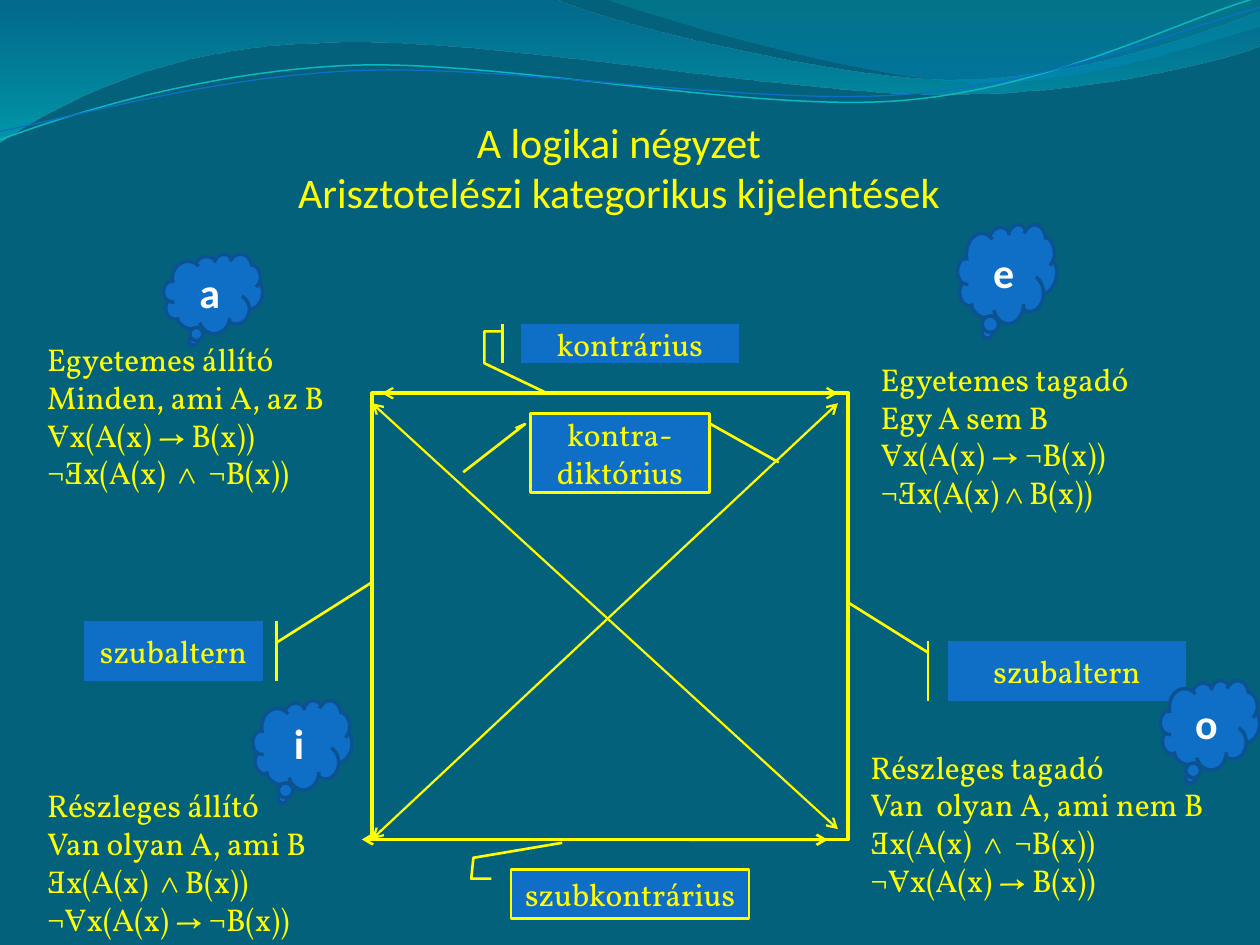
"""Build a slide showing the logical square of Aristotelian categorical statements."""
import pptx
import pptx.dml.color
import pptx.enum.shapes
import pptx.enum.text
import pptx.oxml
import pptx.oxml.ns
import pptx.util

Pt = pptx.util.Pt
KINDS = pptx.enum.shapes.MSO_SHAPE
MIDDLE = pptx.enum.text.MSO_ANCHOR.MIDDLE
CENTER = pptx.enum.text.PP_ALIGN.CENTER
YELLOW, BLUE, NAVY, WHITE, TEAL = "FFFF00", "0F6FC6", "0B5292", "FFFFFF", "04617B"

TITLE = "A logikai négyzet\vArisztotelészi kategorikus kijelentések"
TITLE_FONT = {"name": "Calibri", "size": Pt(24), "bold": False}
BODY_FONT = {"name": "Vollkorn", "size": Pt(18)}
CLOUD_FONT = {"name": "Calibri", "size": Pt(24), "bold": True}

BANDS = [
    ([(0, 0), (316.8, -0.7), (342.7, 12.2, 478.1, 45.4, 545.8, 45.4),
      (614.2, 45.4, 689.8, 18.7, 720, 6.5), (720.7, 25.9),
      (707.8, 31.7, 626.4, 54.7, 537.1, 54), (447.8, 54, 275, 20.2, 185, 24.5),
      (92.9, 25.9, 33.1, 59.8, -0.7, 81.4)],
     [(0, "0074A1", 45), (1, "00C6CF", 55)]),
    ([(344.9, -0.7), (366.5, 7.9, 491, 44.6, 553.7, 46.8),
      (616.3, 49.7, 691.9, 23, 720, 15.1), (720, 0)],
     [(0, "00A1A9", 30), (0.8, "008BBF", 45)]),
]
WAVES = [
    ([(0, 79.9), (34.6, 67, 113.8, 41, 199.4, 37.4),
      (284.4, 33.8, 427, 64.1, 513.4, 57.6),
      (599.8, 51.1, 675.4, 10.8, 718.6, -1.4)], "0AB8BF", 0.85),
    ([(0, 74.9), (33.8, 69.1, 118.1, 43.9, 203.8, 40.3),
      (290.2, 36.7, 429.8, 60.5, 516.2, 54),
      (601.9, 48.2, 677.5, 15.1, 720, 4.3)], BLUE, 0.75),
]
SQUARE = (212.6, 224.7, 272.1, 255)
STATEMENTS = [
    ((19.85, 190.7, 175.7, 94.3), ["Egyetemes állító", "Minden, ami A, az B",
                                   "∀x(A(x) → B(x))", "¬∃x(A(x)  ∧  ¬B(x))"]),
    ((19.85, 445.7, 181.4, 116.6), ["Részleges állító", "Van olyan A, ami B",
                                    "∃x(A(x)  ∧ B(x))", "¬∀x(A(x) → ¬B(x))"]),
    ((496.1, 202.1, 203.8, 94.3), ["Egyetemes tagadó", "Egy A sem B",
                                   "∀x(A(x) → ¬B(x))", "¬∃x(A(x) ∧ B(x))"]),
    ((490.3, 423.6, 209.5, 94.3), ["Részleges tagadó", "Van  olyan A, ami nem B",
                                   "∃x(A(x)  ∧  ¬B(x))", "¬∀x(A(x) → B(x))"]),
]
CALLOUTS = [
    ("kontra-diktórius", KINDS.LINE_CALLOUT_2, (303.1, 236.2, 102.2, 45.4),
     (0.188, -0.083, 0.136, -0.03, 0.741, -0.376)),
    ("kontrárius", KINDS.LINE_CALLOUT_3_ACCENT_BAR, (297.6, 185.2, 124.6, 22.4),
     (0.188, -0.083, 0.188, -0.167, 1, -0.167, 1.744, 0.112)),
    ("szubkontrárius", KINDS.LINE_CALLOUT_3, (292, 496.8, 136.1, 28.2),
     (0.188, -0.083, 0.188, -0.167, -0.236, -0.158, -0.539, 0.215)),
    ("szubaltern", KINDS.LINE_CALLOUT_1_ACCENT_BAR, (48.1, 355, 102.1, 34),
     (0.358, 1.077, -0.65, 1.608)),
    ("szubaltern", KINDS.LINE_CALLOUT_1_ACCENT_BAR, (541.6, 366.5, 136.1, 34),
     (0.188, -0.083, -0.65, -0.417)),
]
CLOUDS = [("a", (93.5, 145.2, 56.7, 45.4)), ("o", (663.1, 388.8, 56.7, 51.1)),
          ("i", (144.5, 400.2, 56.7, 51.1)), ("e", (547.2, 128.2, 56.7, 56.7))]
LINES = [
    ((212.6, 230.4, 478.8, 473.8), 1.25, True),
    ((212.6, 479.5, 478.8, 230.4), 1.25, True),
    ((405.3, 241.9, 445, 264.2), 1.5, False),
    ((218.2, 224.7, 478.8, 224.7), 1.25, True),
    ((206.8, 479.7, 473, 479.9), 1.5, True),
]


def rgb(value):
    return pptx.dml.color.RGBColor.from_string(value)


def points(values):
    return [Pt(value) for value in values]


def assign(target, values):
    for name, value in values.items():
        setattr(target, name, value)


def make_xml(tag, attributes="", content=""):
    namespace = pptx.oxml.ns.nsdecls("a")
    return pptx.oxml.parse_xml(f"<a:{tag} {namespace} {attributes}>{content}</a:{tag}>")


def paint(shape, fill=None, line=None, width=1):
    shape.shadow.inherit = False
    if fill:
        shape.fill.solid()
        shape.fill.fore_color.rgb = rgb(fill)
    else:
        shape.fill.background()
    if line:
        shape.line.color.rgb = rgb(line)
        shape.line.width = Pt(width)
    else:
        shape.line.fill.background()


def write(shape, lines, font, color=YELLOW, alignment=None, anchor=None):
    frame = shape.text_frame
    assign(frame, {"word_wrap": True, "vertical_anchor": anchor})
    for index, text in enumerate(lines):
        paragraph = frame.paragraphs[0] if index == 0 else frame.add_paragraph()
        paragraph.text = text
        paragraph.alignment = alignment
        for run in paragraph.runs:
            assign(run.font, font)
            run.font.color.rgb = rgb(color)


def add_outline(slide, outline, close):
    knots = [points(segment[-2:]) for segment in outline]
    builder = slide.shapes.build_freeform(*knots[0])
    builder.add_line_segments(knots[1:], close=close)
    shape = builder.convert_to_shape()
    straight = shape.element.spPr.findall(".//" + pptx.oxml.ns.qn("a:lnTo"))
    for element, segment in zip(straight, outline[1:]):
        if len(segment) == 6:
            values = points(segment)
            content = "".join(f'<a:pt x="{x - shape.left}" y="{y - shape.top}"/>'
                              for x, y in zip(values[::2], values[1::2]))
            element.getparent().replace(element, make_xml("cubicBezTo", content=content))
    return shape


def add_band(slide, outline, stops):
    shape = add_outline(slide, outline, True)
    paint(shape)
    shape.fill.gradient()
    shape.fill.gradient_angle = 270
    for stop, (position, color, opacity) in zip(shape.fill.gradient_stops, stops):
        stop.position = position
        stop.color.rgb = rgb(color)
    colors = shape.element.spPr.findall(".//" + pptx.oxml.ns.qn("a:srgbClr"))
    for element, (position, color, opacity) in zip(colors, stops):
        element.append(make_xml("alpha", f'val="{opacity * 1000}"'))


def add_line(slide, ends, width, arrows):
    kind = pptx.enum.shapes.MSO_CONNECTOR.STRAIGHT
    connector = slide.shapes.add_connector(kind, *points(ends))
    connector.line.color.rgb = rgb(YELLOW)
    connector.line.width = Pt(width)
    properties = connector.element.spPr
    if arrows:
        line = properties.find(pptx.oxml.ns.qn("a:ln"))
        for tag in ("headEnd", "tailEnd"):
            line.append(make_xml(tag, 'type="arrow"'))
    properties.append(make_xml("effectLst"))


def main():
    presentation = pptx.Presentation()
    assign(presentation, {"slide_width": Pt(720), "slide_height": Pt(540)})
    slide = presentation.slides.add_slide(presentation.slide_layouts[5])
    slide.background.fill.solid()
    slide.background.fill.fore_color.rgb = rgb(TEAL)
    for outline, stops in BANDS:
        add_band(slide, outline, stops)
    for outline, color, width in WAVES:
        paint(add_outline(slide, outline, False), line=color, width=width)
    title = slide.shapes.title
    assign(title, dict(zip(("left", "top", "width", "height"),
                           points((44.8, 62.6, 617.8, 65.5)))))
    write(title, [TITLE], TITLE_FONT, alignment=CENTER, anchor=MIDDLE)
    square = slide.shapes.add_shape(KINDS.RECTANGLE, *points(SQUARE))
    paint(square, line=YELLOW, width=2)
    for box, lines in STATEMENTS:
        write(slide.shapes.add_textbox(*points(box)), lines, BODY_FONT)
    for text, kind, box, adjustments in CALLOUTS:
        callout = slide.shapes.add_shape(kind, *points(box))
        for index, value in enumerate(adjustments):
            callout.adjustments[index] = value
        paint(callout, BLUE, YELLOW, 1.5)
        write(callout, [text], BODY_FONT, alignment=CENTER, anchor=MIDDLE)
    for letter, box in CLOUDS:
        cloud = slide.shapes.add_shape(KINDS.CLOUD_CALLOUT, *points(box))
        paint(cloud, BLUE, NAVY, 2)
        write(cloud, [letter], CLOUD_FONT, WHITE, CENTER, MIDDLE)
    for ends, width, arrows in LINES:
        add_line(slide, ends, width, arrows)
    presentation.save("out.pptx")


if __name__ == "__main__":
    main()
